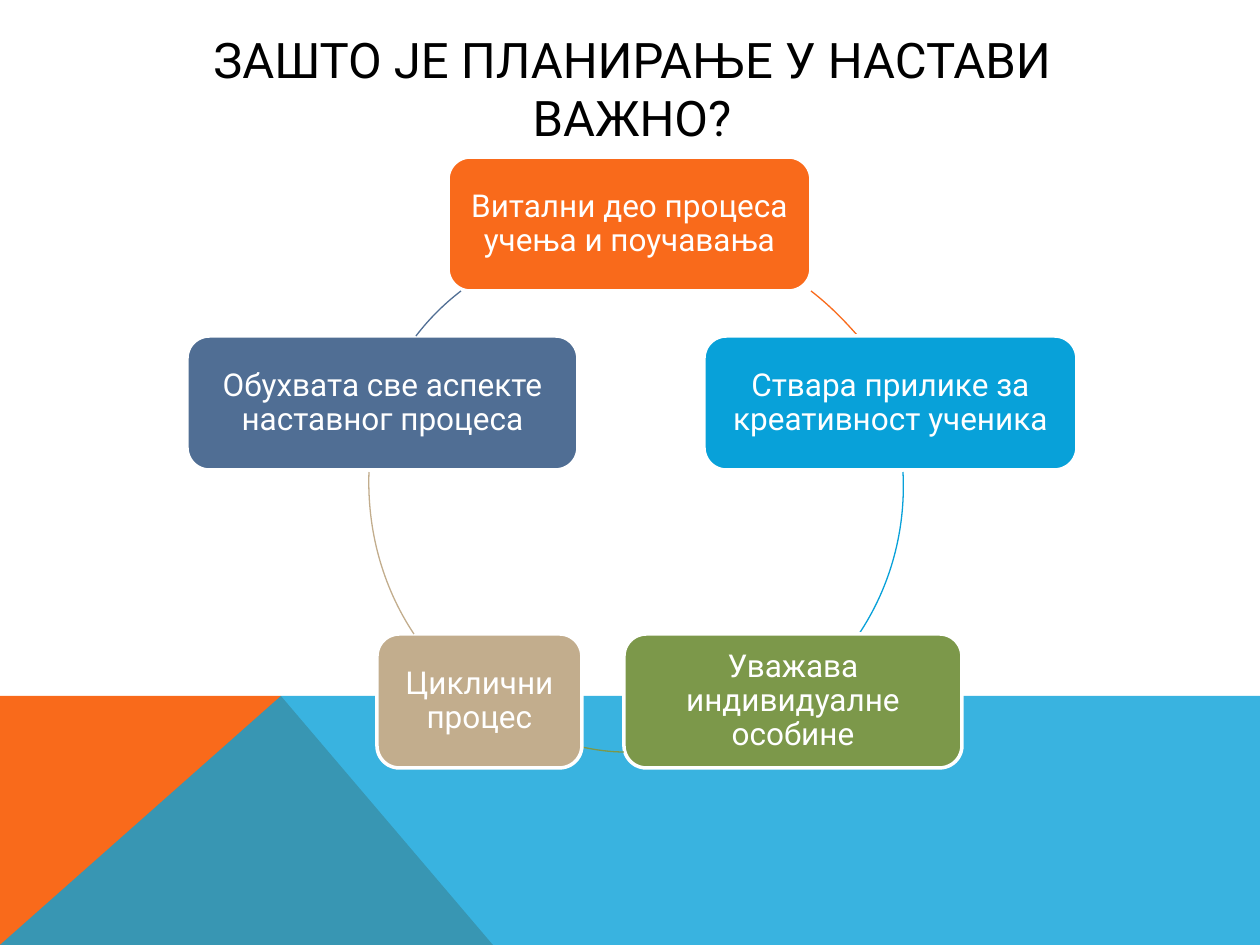
from dataclasses import dataclass

from lxml.etree import SubElement
from pptx import Presentation
from pptx.dml.color import RGBColor
from pptx.enum.shapes import MSO_SHAPE
from pptx.enum.text import MSO_ANCHOR, PP_ALIGN
from pptx.oxml.ns import qn
from pptx.util import Pt

PX = 914400 // 126  # EMU per px
WIDTH, HEIGHT = 1260, 945
BOX_HEIGHT = 134
RING_SIZE = 534


@dataclass(frozen=True)
class Theme:
    font: str = "Roboto"
    title_size: int = 28
    box_size: int = 18
    black: str = "000000"
    white: str = "FFFFFF"
    orange: str = "F96A1B"
    blue: str = "08A1D9"
    green: str = "7C984A"
    tan: str = "C2AD8D"
    slate: str = "506E94"


THEME = Theme()

# Cycle steps: text, colour, box (left, top, width),
# ring corner and the Bezier curve on that ring to the next step
STEPS = [
    ("Витални део процеса учења и поучавања", THEME.orange, (448, 157, 363),
     (383, 237), [(811, 291), (828, 304), (843, 319), (857, 335)]),
    ("Ствара прилике за креативност ученика", THEME.blue, (704, 336, 373),
     (369, 219), [(903, 472), (906, 529), (891, 586), (859, 634)]),
    ("Уважава индивидуалне особине", THEME.green, (624, 634, 338),
     (369, 219), [(624, 752), (610, 752), (596, 750), (582, 747)]),
    ("Циклични процес", THEME.tan, (377, 634, 205),
     (369, 219), [(414, 634), (382, 586), (367, 529), (369, 472)]),
    ("Обухвата све аспекте наставног процеса", THEME.slate, (187, 336, 391),
     (355, 237), [(416, 336), (429, 319), (444, 304), (461, 291)]),
]


def rgb(color):
    return RGBColor.from_string(color)


def set_text(shape, text, *, size, color, inset, spacing=1.0):
    frame = shape.text_frame
    frame.word_wrap = True
    frame.vertical_anchor = MSO_ANCHOR.MIDDLE
    frame.margin_left = frame.margin_right = inset * PX
    frame.margin_top = frame.margin_bottom = inset * PX
    paragraph = frame.paragraphs[0]
    paragraph.alignment = PP_ALIGN.CENTER
    paragraph.line_spacing = spacing
    run = paragraph.add_run()
    run.text = text
    run.font.name = THEME.font
    run.font.size = Pt(size)
    run.font.color.rgb = rgb(color)


def add_outline(slide, points, *, close):
    builder = slide.shapes.build_freeform(*points[0], scale=PX)
    builder.add_line_segments(points[1:], close=close)
    shape = builder.convert_to_shape()
    shape.shadow.inherit = False
    return shape


def add_polygon(slide, points, color, opacity=100):
    shape = add_outline(slide, points, close=True)
    shape.fill.solid()
    shape.fill.fore_color.rgb = rgb(color)
    shape.line.fill.background()
    if opacity < 100:
        color_element = shape.fill._xPr.find(".//" + qn("a:srgbClr"))
        SubElement(color_element, qn("a:alpha"), val=str(opacity * 1000))


def add_curve(slide, corner, controls, color):
    """Draw a cubic curve in the frame of the whole ring."""
    left, top = corner
    far_corner = (left + RING_SIZE, top + RING_SIZE)
    shape = add_outline(slide, [corner, far_corner], close=False)
    shape.fill.background()
    shape.line.color.rgb = rgb(color)
    shape.line.width = Pt(0.75)

    # Replace the straight segment by the Bezier curve
    outline = shape._element.spPr.find(".//" + qn("a:path"))
    for segment in list(outline):
        outline.remove(segment)
    outline.set("w", str(RING_SIZE * PX))
    outline.set("h", str(RING_SIZE * PX))
    for tag, points in (("a:moveTo", controls[:1]), ("a:cubicBezTo", controls[1:])):
        segment = SubElement(outline, qn(tag))
        for x, y in points:
            SubElement(segment, qn("a:pt"), x=str((x - left) * PX), y=str((y - top) * PX))


def add_box(slide, text, color, left, top, width):
    shape = slide.shapes.add_shape(
        MSO_SHAPE.ROUNDED_RECTANGLE, left * PX, top * PX, width * PX, BOX_HEIGHT * PX)
    shape.shadow.inherit = False
    shape.fill.solid()
    shape.fill.fore_color.rgb = rgb(color)
    shape.line.color.rgb = rgb(THEME.white)
    shape.line.width = Pt(2)
    # The preset's own text rectangle already insets the text by the corner
    set_text(shape, text, size=THEME.box_size, color=THEME.white,
             inset=9, spacing=0.9)


def add_title(slide, text):
    box = slide.shapes.add_textbox(114 * PX, 50 * PX, 1036 * PX, 76 * PX)
    set_text(box, text, size=THEME.title_size, color=THEME.black, inset=6)


def main():
    presentation = Presentation()
    presentation.slide_width = WIDTH * PX
    presentation.slide_height = HEIGHT * PX
    slide = presentation.slides.add_slide(presentation.slide_layouts[6])

    # Coloured ground
    horizon, ridge = 696, 281
    add_polygon(slide, [(0, HEIGHT), (0, horizon), (ridge, horizon), (493, HEIGHT)],
                THEME.orange)
    add_polygon(slide, [(0, HEIGHT), (ridge, horizon), (WIDTH, horizon), (WIDTH, HEIGHT)],
                THEME.blue, opacity=80)

    add_title(slide, "ЗАШТО ЈЕ ПЛАНИРАЊЕ У НАСТАВИ ВАЖНО?")

    # Cycle
    for text, color, box, corner, controls in STEPS:
        add_box(slide, text, color, *box)
        add_curve(slide, corner, controls, color)

    presentation.save("out.pptx")


if __name__ == "__main__":
    main()
